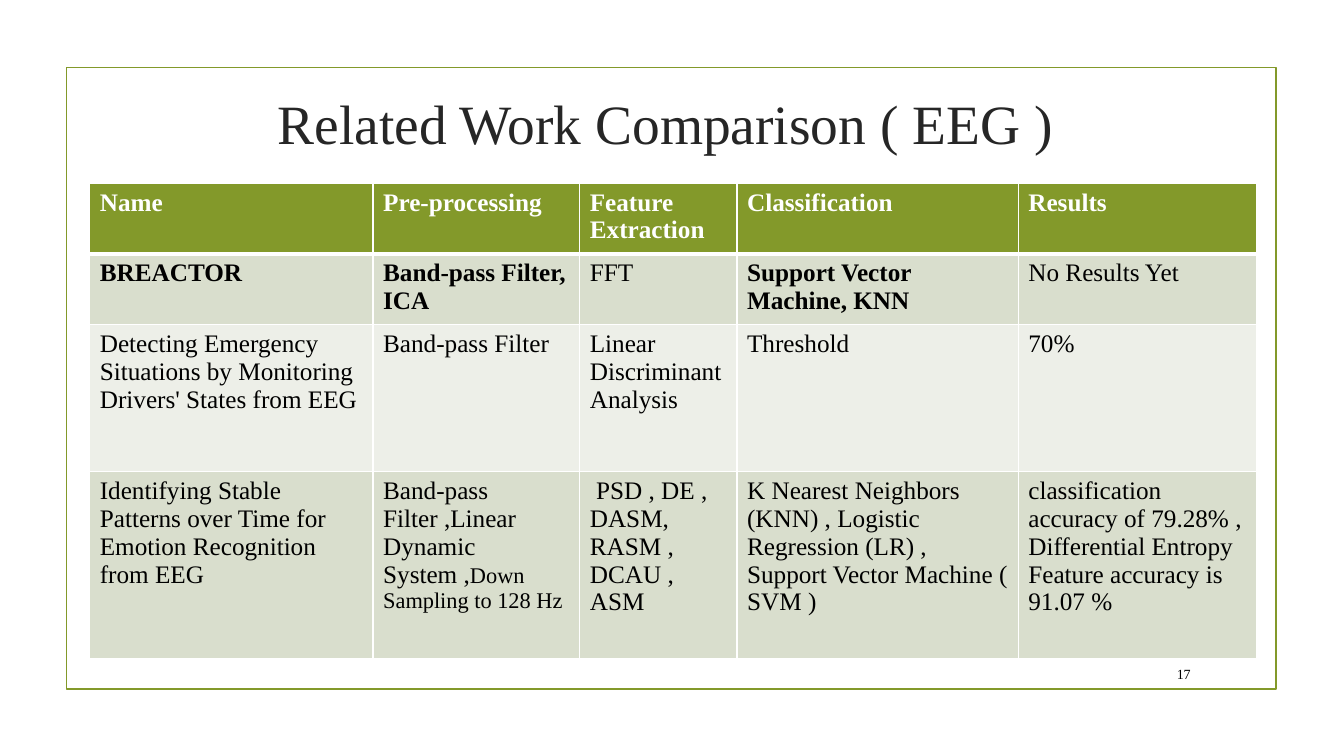
"""Build the slide that compares related EEG work."""
from dataclasses import dataclass

from lxml import etree
from pptx import Presentation
from pptx.dml.color import RGBColor
from pptx.enum.shapes import MSO_SHAPE
from pptx.enum.text import MSO_ANCHOR, PP_ALIGN
from pptx.oxml.ns import qn
from pptx.util import Inches, Pt

RECTANGLE = MSO_SHAPE.RECTANGLE
MIDDLE = MSO_ANCHOR.MIDDLE
LEFT, CENTER, RIGHT = PP_ALIGN.LEFT, PP_ALIGN.CENTER, PP_ALIGN.RIGHT

FONT = "Times New Roman"
COLOURS = {
    "olive": "83992A",
    "title": "262626",
    "black": "000000",
    "white": "FFFFFF",
    "band_dark": "D9DECD",
    "band_light": "EDEFE8",
}
SLIDE_WIDTH, SLIDE_HEIGHT = Inches(13.33), Inches(7.5)


@dataclass(frozen=True)
class Area:
    """A place on the slide, in percent of its width and height."""

    left: float
    top: float
    width: float
    height: float

    def lengths(self) -> tuple[int, int, int, int]:
        """Return left, top, width and height as slide lengths."""
        return across(self.left), down(self.top), across(self.width), down(self.height)


@dataclass(frozen=True)
class Entry:
    """The content of one table cell, with an optional smaller ending."""

    text: str
    bold: bool = False
    small_ending: str = ""


@dataclass(frozen=True)
class Row:
    """One row of the comparison, its height in percent of the slide."""

    height: float
    fill: str
    entries: tuple[Entry, ...]
    ink: str = "black"
    bottom_rule: float = 1


FRAME = Area(4.95, 8.93, 90, 82.27)
TITLE = Area(10.65, 13.6, 78.75, 5.2)
COMPARISON = Area(6.68, 24.27, 86.79, 60.4)
PAGE_NUMBER = Area(84.9, 87.07, 4.43, 4.13)
COLUMN_WIDTHS = (21.08, 15.38, 11.7, 20.93, 17.7)
HEADINGS = ("Name", "Pre-processing", "Feature Extraction", "Classification", "Results")

ROWS = (
    Row(8.13, "olive", tuple(Entry(heading, bold=True) for heading in HEADINGS),
        ink="white", bottom_rule=3),
    Row(8.13, "band_dark", (
        Entry("BREACTOR", bold=True),
        Entry("Band-pass Filter, ICA", bold=True),
        Entry("FFT"),
        Entry("Support Vector Machine, KNN", bold=True),
        Entry("No Results Yet"),
    )),
    Row(19.47, "band_light", (
        Entry("Detecting Emergency Situations by Monitoring\nDrivers' States from EEG"),
        Entry("Band-pass Filter"),
        Entry("Linear Discriminant Analysis"),
        Entry("Threshold"),
        Entry("70%"),
    )),
    Row(24.67, "band_dark", (
        Entry("Identifying Stable Patterns over Time for Emotion Recognition from EEG"),
        Entry("Band-pass Filter ,Linear Dynamic System ,",
              small_ending="Down Sampling to 128 Hz"),
        Entry(" PSD , DE , DASM, RASM , DCAU , ASM"),
        Entry("K Nearest Neighbors (KNN) , Logistic Regression (LR) , "
              "Support Vector Machine ( SVM )"),
        Entry("classification accuracy of 79.28% , Differential Entropy "
              "Feature accuracy is 91.07 %"),
    )),
)


def across(percent: float) -> int:
    """Return a share of the slide's width."""
    return round(SLIDE_WIDTH * percent / 100)


def down(percent: float) -> int:
    """Return a share of the slide's height."""
    return round(SLIDE_HEIGHT * percent / 100)


def colour(name: str) -> RGBColor:
    """Return a named colour."""
    return RGBColor.from_string(COLOURS[name])


def write(paragraph, text: str, *, size: float = 18, ink: str = "black",
          bold: bool = False, align=LEFT) -> None:
    """Add formatted text to a paragraph."""
    paragraph.alignment = align
    run = paragraph.add_run()
    run.text = text
    run.font.name = FONT
    run.font.size = Pt(size)
    run.font.bold = bold
    run.font.color.rgb = colour(ink)


def add_label(slide, area: Area, text: str, *, wrap: bool = True, **text_format) -> None:
    """Add a vertically centred text box."""
    frame = slide.shapes.add_textbox(*area.lengths()).text_frame
    frame.word_wrap = wrap
    frame.vertical_anchor = MIDDLE
    write(frame.paragraphs[0], text, **text_format)


def add_frame(slide) -> None:
    """Add the thin outline around the content."""
    outline = slide.shapes.add_shape(RECTANGLE, *FRAME.lengths())
    outline.shadow.inherit = False
    outline.fill.background()
    outline.line.color.rgb = colour("olive")
    outline.line.width = Pt(1.25)


def rule_cell(cell, top: float, bottom: float) -> None:
    """Draw white rules around a cell, with widths in points."""
    properties = cell._tc.get_or_add_tcPr()
    for side, width in (("L", 1), ("R", 1), ("T", top), ("B", bottom)):
        rule = etree.SubElement(properties, qn(f"a:ln{side}"), w=str(Pt(width)))
        fill = etree.SubElement(rule, qn("a:solidFill"))
        etree.SubElement(fill, qn("a:srgbClr"), val=COLOURS["white"])


def fill_cell(cell, entry: Entry, row: Row, top_rule: float) -> None:
    """Give a cell its rules, fill and text."""
    rule_cell(cell, top_rule, row.bottom_rule)
    cell.fill.solid()
    cell.fill.fore_color.rgb = colour(row.fill)
    for index, line in enumerate(entry.text.split("\n")):
        frame = cell.text_frame
        paragraph = frame.add_paragraph() if index else frame.paragraphs[0]
        write(paragraph, line, ink=row.ink, bold=entry.bold)
    if entry.small_ending:
        write(paragraph, entry.small_ending, size=16, ink=row.ink)


def add_comparison(slide) -> None:
    """Add the table of related work."""
    table = slide.shapes.add_table(
        len(ROWS), len(COLUMN_WIDTHS), *COMPARISON.lengths()).table
    for column, width in zip(table.columns, COLUMN_WIDTHS):
        column.width = across(width)
    top_rule = 1
    for table_row, row in zip(table.rows, ROWS):
        table_row.height = down(row.height)
        for cell, entry in zip(table_row.cells, row.entries):
            fill_cell(cell, entry, row, top_rule)
        top_rule = row.bottom_rule


def main() -> None:
    """Build and save the presentation."""
    presentation = Presentation()
    presentation.slide_width = SLIDE_WIDTH
    presentation.slide_height = SLIDE_HEIGHT
    slide = presentation.slides.add_slide(presentation.slide_layouts[6])
    add_frame(slide)
    add_label(slide, TITLE, "Related Work Comparison ( EEG ) ",
              size=39.6, ink="title", align=CENTER)
    add_comparison(slide)
    add_label(slide, PAGE_NUMBER, "17", size=10, align=RIGHT)
    presentation.save("out.pptx")


if __name__ == "__main__":
    main()
